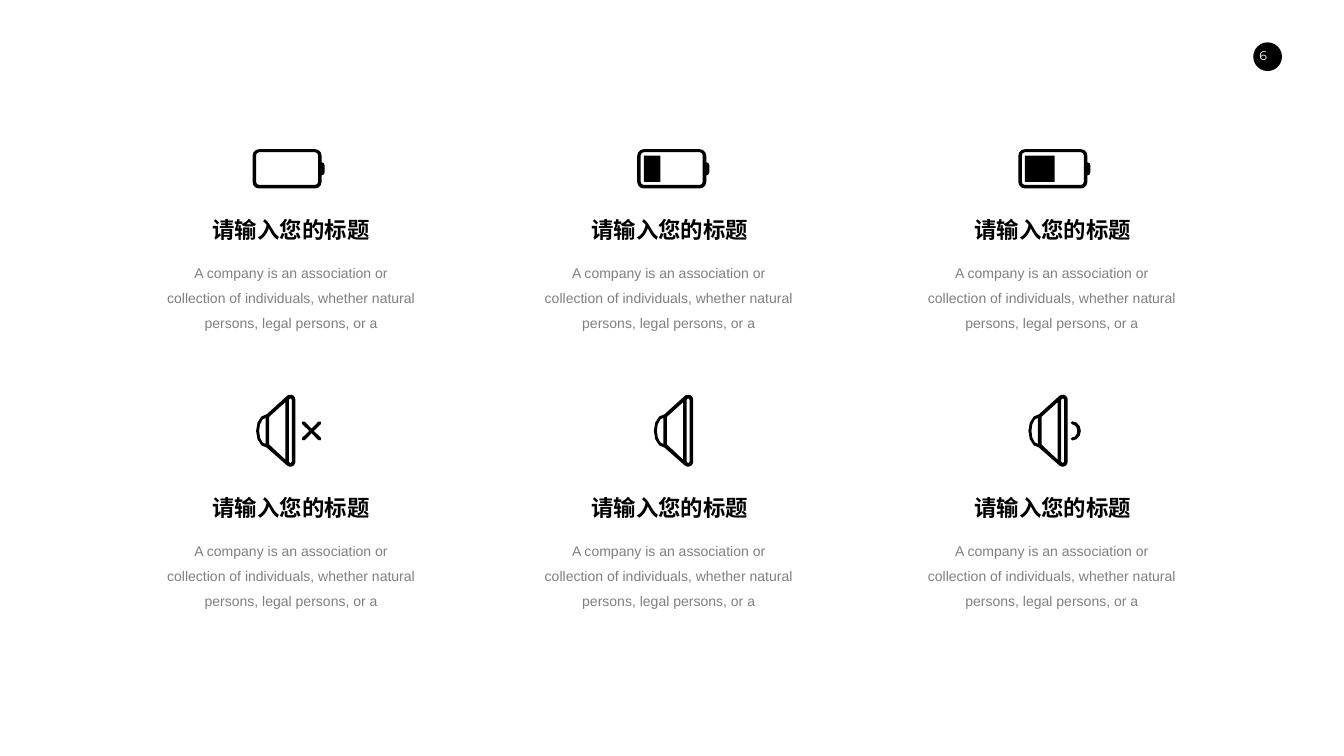
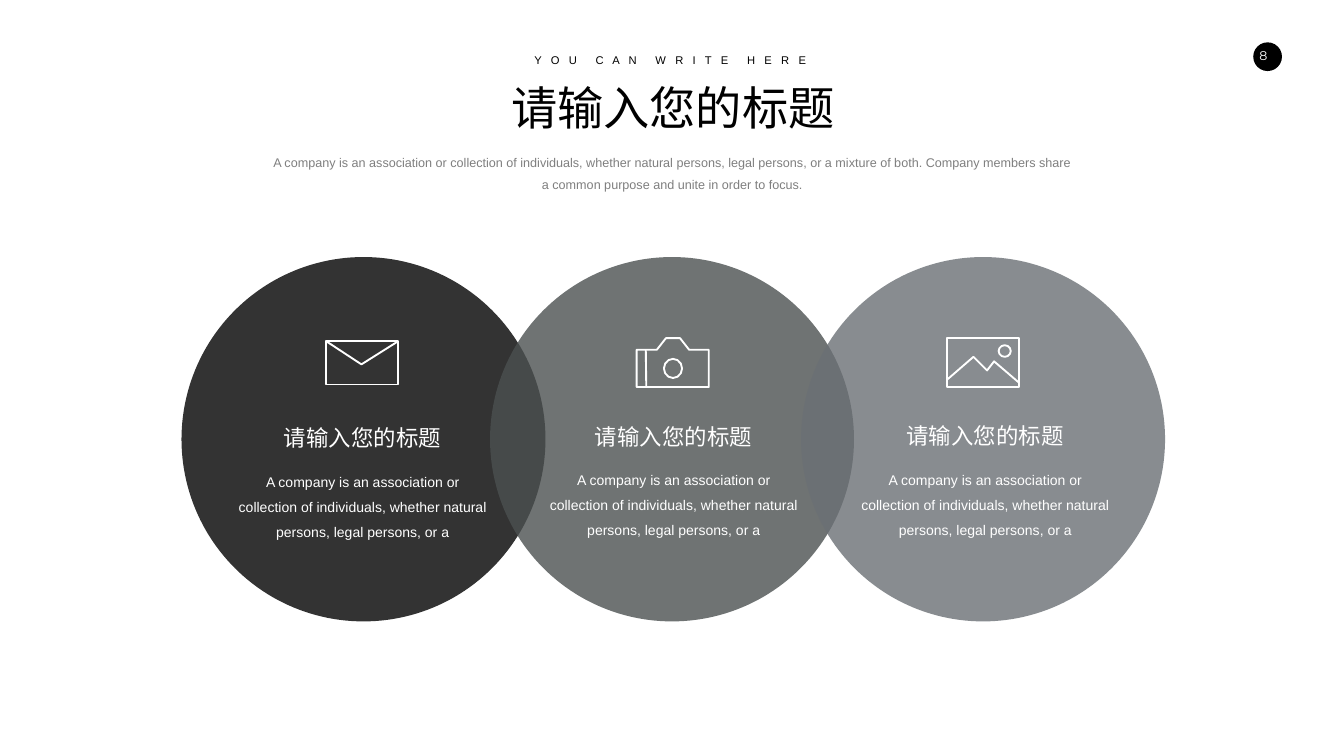
from dataclasses import dataclass
from math import ceil, cos, radians, sin

from lxml.etree import SubElement
from pptx import Presentation
from pptx.dml.color import RGBColor as Rgb
from pptx.enum.shapes import MSO_CONNECTOR as Conn, MSO_SHAPE as Kind
from pptx.enum.text import MSO_ANCHOR as Anchor, MSO_AUTO_SIZE as Fit, PP_ALIGN as Align
from pptx.oxml.ns import qn
from pptx.util import Inches, Pt


@dataclass(frozen=True)
class Theme:
    """Colours, fonts and type sizes of the deck."""
    black: str = "000000"
    white: str = "FFFFFF"
    gray: str = "7F7F7F"
    discs: tuple = ("000000", "4B5050", "6B7075")
    font: str = "Arial"
    num_font: str = "Montserrat"
    title: int = 66
    head: int = 32
    body: int = 20
    lead: int = 18
    kicker: int = 16
    num: int = 18
    stroke: float = 2.7


T = Theme()
HEAD = "请输入您的标题"
ITEM = ("A company is an association or collection of individuals, "
        "whether natural persons, legal persons, or a")
LEAD = (ITEM + " mixture of both. Company members share a common purpose "
        "and unite in order to focus.")


def ink(run, size, color=T.black, bold=False, font=T.font):
    """Format a run."""
    run.font.name = font
    run.font.size = Pt(size)
    run.font.bold = bold
    run.font.color.rgb = Rgb.from_string(color)


def style(box, text, size, color=T.black, bold=False, gap=None, font=T.font):
    """Fill a text shape with one centred paragraph."""
    frame = box.text_frame
    frame.text = text
    frame.word_wrap = True
    frame.auto_size = Fit.NONE
    frame.vertical_anchor = Anchor.TOP
    para = frame.paragraphs[0]
    para.alignment = Align.CENTER
    if gap:
        para.line_spacing = gap
    for run in para.runs:
        ink(run, size, color, bold, font)
    return para


def label(slide, x, y, w, h, *args, **kwargs):
    """Add a styled text box."""
    box = slide.shapes.add_textbox(Inches(x), Inches(y), Inches(w), Inches(h))
    return box, style(box, *args, **kwargs)


def paint(shape, fill=None, line=None):
    """Set the fill and the line of a shape, or none."""
    shape.shadow.inherit = False
    if fill:
        shape.fill.solid()
        shape.fill.fore_color.rgb = Rgb.from_string(fill)
    else:
        shape.fill.background()
    if line:
        shape.line.color.rgb = Rgb.from_string(line)
        shape.line.width = Pt(T.stroke)
    else:
        shape.line.fill.background()
    return shape


def oval(slide, x, y, w, h, fill=None, line=None):
    """Add an ellipse."""
    shape = slide.shapes.add_shape(Kind.OVAL, Inches(x), Inches(y), Inches(w), Inches(h))
    return paint(shape, fill, line)


def draw(slide, x, y, paths, fill=None, line=None, close=True):
    """Add one freeform from lists of points set off from x, y."""
    paths = [[(Inches(x + a), Inches(y + b)) for a, b in path] for path in paths]
    pen = slide.shapes.build_freeform(*paths[0][0])
    for i, path in enumerate(paths):
        if i:
            pen.move_to(*path[0])
        pen.add_line_segments(path[1:], close=close)
    return paint(pen.convert_to_shape(), fill, line)


def trace(slide, x, y, path, close=False):
    """Add a white outline."""
    return draw(slide, x, y, [path], line=T.white, close=close)


def arc(x, y, rx, ry, start, end):
    """Give points along an ellipse, clockwise when end exceeds start."""
    steps = 2 if ry < 0.08 else ceil(abs(end - start) / 30)
    turns = [radians(start + (end - start) * i / steps) for i in range(steps + 1)]
    return [(x + rx * cos(t), y + ry * sin(t)) for t in turns]


def rect(x, y, w, h):
    """Give the corners of a rectangle."""
    return [(x, y), (x + w, y), (x + w, y + h), (x, y + h)]


def bend(x, y, w, h, r):
    """Give the four rounded corners of a rectangle, from the top right."""
    mids = [(x + w - r, y + r), (x + w - r, y + h - r), (x + r, y + h - r), (x + r, y + r)]
    return [arc(a, b, r, r, 90 * i - 90, 90 * i) for i, (a, b) in enumerate(mids)]


def cell(slide, x, y, level):
    """Draw a battery charged to a given width."""
    first, *rest = bend(0, 0, 1.37, 0.78, 0.13)
    knob = arc(1.37, 0.32, 0.06, 0.06, -90, 0) + arc(1.37, 0.46, 0.06, 0.06, 0, 90)
    paths = [first + knob + sum(rest, []), sum(bend(0.07, 0.06, 1.23, 0.65, 0.06), [])]
    if level:
        paths.append(rect(0.13, 0.13, level, 0.52))
    draw(slide, x, y, paths, T.black)


def cross():
    """Give the mute sign beside a speaker."""
    x, y, far, r = 1.1, 0.72, 0.16, 0.035
    path = []
    for turn in range(0, 360, 90):
        t, tip = radians(turn), radians(turn + 45)
        path.append((x + 0.045 * cos(t), y + 0.045 * sin(t)))
        reach = far * 2 ** 0.5
        path += arc(x + reach * cos(tip), y + reach * sin(tip), r, r, turn - 45, turn + 135)
    return path


def wave():
    """Give the sound wave beside a speaker."""
    x, y = 0.87, 0.72
    return (arc(x, y, 0.17, 0.19, -90, 90) + arc(x, y + 0.16, 0.03, 0.03, 90, 270)
            + arc(x, y, 0.1, 0.13, 90, -90) + arc(x, y - 0.16, 0.03, 0.03, 90, 270))


def horn(slide, x, y, extra):
    """Draw a speaker with extra outlines."""
    top, low, mid = 0.1, 1.33, 0.72
    shell = (arc(0.68, top, 0.1, 0.1, -130, 0) + arc(0.68, low, 0.1, 0.1, 0, 130)
             + arc(0.21, mid, 0.21, 0.33, 90, 270))
    slot = arc(0.68, top, 0.03, 0.03, 180, 360) + arc(0.68, low, 0.03, 0.03, 0, 180)
    cone = [(0.58, 0.15), (0.58, 1.29), (0.26, 0.99), (0.26, 0.44)]
    dome = arc(0.19, mid, 0.13, 0.26, 90, 270)
    draw(slide, x, y, [shell, slot, cone, dome] + extra, T.black)


def mail(slide, x, y):
    """Draw an envelope."""
    trace(slide, x, y, rect(0, 0, 1.43, 0.86), close=True)
    trace(slide, x, y, [(0, 0), (0.7, 0.46), (1.43, 0)])


def camera(slide, x, y):
    """Draw a camera."""
    trace(slide, x, y, [(1.04, 0.23), (0.86, 0), (0.58, 0), (0.4, 0.23), (0, 0.23),
                        (0, 0.97), (1.43, 0.97), (1.43, 0.23)], close=True)
    oval(slide, x + 0.54, y + 0.41, 0.36, 0.38, line=T.white)
    edge = slide.shapes.add_connector(
        Conn.STRAIGHT, Inches(x + 0.18), Inches(y + 0.23), Inches(x + 0.19), Inches(y + 0.97))
    edge.line.color.rgb = Rgb.from_string(T.white)
    edge.line.width = Pt(T.stroke)
    SubElement(edge._element.spPr, qn("a:effectLst"))


def photo(slide, x, y):
    """Draw a framed landscape."""
    trace(slide, x, y, rect(0, 0, 1.43, 0.97), close=True)
    trace(slide, x, y, [(0, 0.83), (0.53, 0.37), (0.8, 0.64), (0.94, 0.46), (1.43, 0.88)])
    oval(slide, x + 1.03, y + 0.14, 0.24, 0.23, line=T.white)


def entry(slide, x, y, shift, wide, color, top_color, bold):
    """Write a heading with its text below, the text at x, y."""
    label(slide, x, y, 5.25, 1.54, ITEM, T.body, color, gap=1.5)
    label(slide, x + shift, y - 0.8, wide, 0.64, HEAD, T.head, top_color, bold)


def kicker(slide, *words):
    """Write a line of spaced letters with wider gaps between words."""
    _, para = label(slide, 9.87, 1.0, 6.85, 0.37, "", T.kicker)
    for i, word in enumerate(words):
        parts = [(" ", "1780")] if i else []
        for text, space in parts + [(" ".join(word), "445")]:
            run = para.add_run()
            run.text = text
            ink(run, T.kicker)
            run.font._element.set("spc", space)


def badge(slide, num):
    """Add the page number on its disc."""
    oval(slide, 24.86, 0.84, 0.57, 0.57, T.black)
    box, _ = label(slide, 24.63, 0.86, 0.86, 0.5, str(num), T.num, T.white, font=T.num_font)
    frame = box.text_frame
    frame.margin_left = frame.margin_right = Inches(0.2)
    frame.margin_top = frame.margin_bottom = Inches(0.1)


def grid(deck):
    """Build the slide of batteries and speakers."""
    slide = deck.slides.add_slide(deck.slide_layouts[6])
    badge(slide, 6)
    for y in (5.03, 10.55):
        for x, shift in ((3.15, -0.14), (10.64, -0.12), (18.24, -0.12)):
            entry(slide, x, y, shift, 5.53, T.gray, T.black, True)
    for x, level in ((5.01, 0), (12.64, 0.33), (20.2, 0.59)):
        cell(slide, x, 2.96, level)
    for x, extra in ((5.08, [cross()]), (12.97, []), (20.4, [wave()])):
        horn(slide, x, 7.83, extra)


def rings(deck):
    """Build the slide of three overlapping discs."""
    slide = deck.slides.add_slide(deck.slide_layouts[5])
    badge(slide, 8)
    for x, color in zip((3.6, 9.72, 15.89), T.discs):
        disc = oval(slide, x, 5.1, 7.22, 7.23, color)
        for tint in disc._element.spPr.iter(qn("a:srgbClr")):
            SubElement(tint, qn("a:alpha"), val="80000")
    title = slide.shapes.title
    title.left, title.top = Inches(5.82), Inches(1.52)
    title.width, title.height = Inches(15.05), Inches(1.21)
    style(title, HEAD, T.title)
    kicker(slide, "YOU", "CAN", "WRITE", "HERE")
    label(slide, 5.32, 2.87, 16.03, 1.01, LEAD, T.lead, T.gray, gap=1.5)
    items = ((mail, 6.47, 6.77, 4.57, 9.17), (camera, 12.63, 6.71, 10.74, 9.14),
             (photo, 18.78, 6.71, 16.92, 9.13))
    for icon, left, top, x, y in items:
        icon(slide, left, top)
        entry(slide, x, y, 0.67, 3.9, T.white, T.white, False)


def main():
    """Build and save the deck."""
    deck = Presentation()
    deck.slide_width, deck.slide_height = Inches(26.66), Inches(15)
    grid(deck)
    rings(deck)
    deck.save("out.pptx")


if __name__ == "__main__":
    main()
